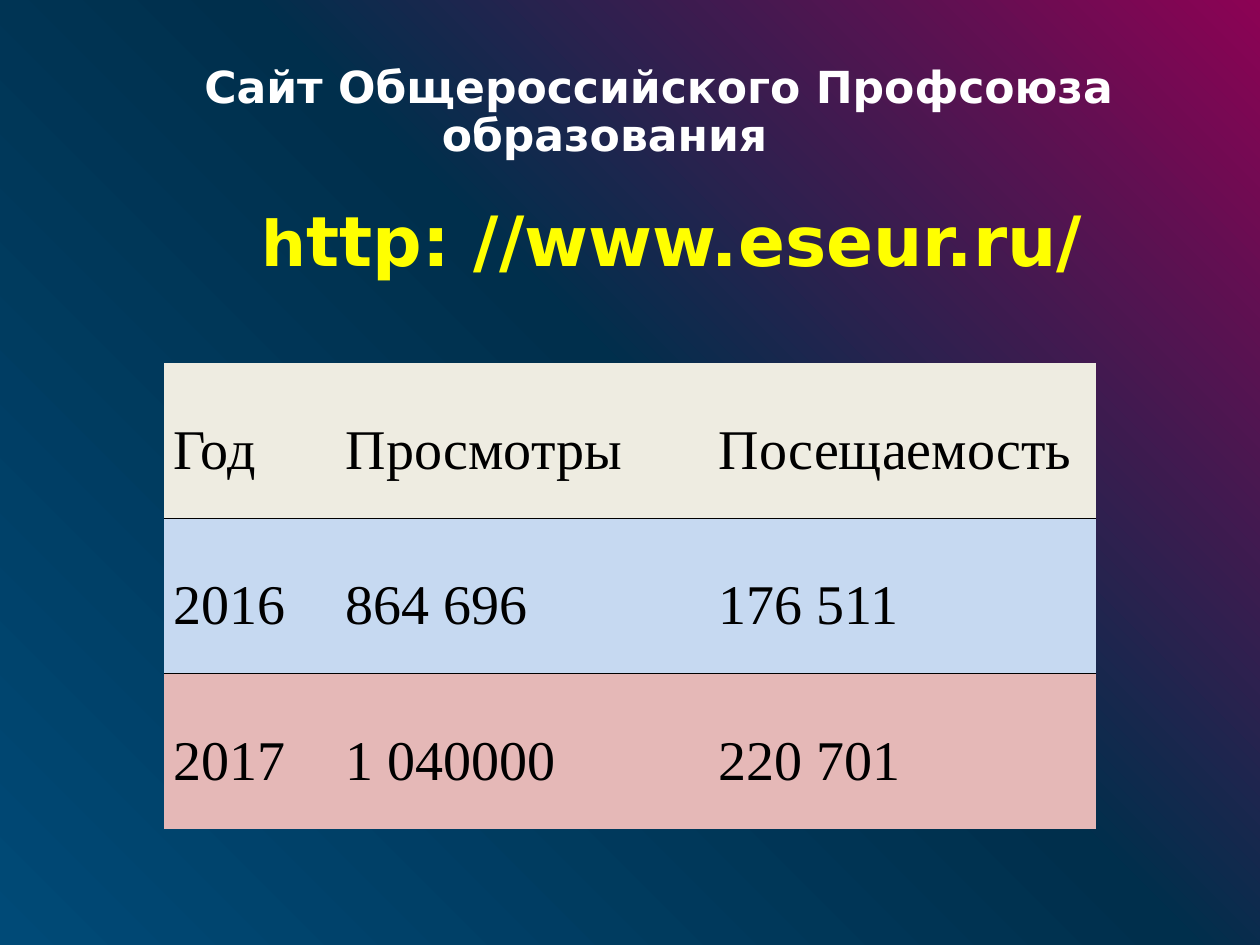
import copy

import pptx
import pptx.dml.color
import pptx.enum.text
import pptx.oxml
import pptx.oxml.ns
import pptx.util

Pt = pptx.util.Pt
RGB = pptx.dml.color.RGBColor
MIDDLE = pptx.enum.text.MSO_ANCHOR.MIDDLE
CENTER = pptx.enum.text.PP_ALIGN.CENTER

WHITE = RGB(0xFF, 0xFF, 0xFF)
BLACK = RGB(0, 0, 0)
YELLOW = RGB(0xFF, 0xFF, 0)
BLUE = RGB(0, 0x4A, 0x77)
NAVY = RGB(0, 0x2F, 0x4C)
PLUM = RGB(0x8C, 0x02, 0x54)
CREAM = RGB(0xEE, 0xEC, 0xE1)
SKY = RGB(0xC6, 0xD9, 0xF1)
ROSE = RGB(0xE5, 0xB8, 0xB7)
NO_GRID = "{2D5ABB26-0587-4C30-8999-92F81FD0307C}"


class Deck:
    head_font = "DejaVu Sans"
    body_font = "Times New Roman"

    def __init__(self, wide, high):
        self.prs = pptx.Presentation()
        self.prs.slide_width, self.prs.slide_height = Pt(wide), Pt(high)
        self.slide = self.prs.slides.add_slide(self.prs.slide_layouts[6])

    def back(self, stops, angle):
        fill = self.slide.background.fill
        fill.gradient()
        fill.gradient_angle = angle
        items = self.slide.element.find(".//" + pptx.oxml.ns.qn("a:gsLst"))
        while len(items) < len(stops):
            items.append(copy.deepcopy(items[-1]))
        for stop, (place, color) in zip(fill.gradient_stops, stops):
            stop.position, stop.color.rgb = place, color

    def run(self, para, text, size, color, font, bold=False):
        run = para.add_run()
        run.text = text
        run.font.name, run.font.size, run.font.bold = font, Pt(size), bold
        run.font.color.rgb = color

    def title(self, box, lines):
        """Each line is its first-line indent, space before and runs."""
        frame = self.slide.shapes.add_textbox(*map(Pt, box)).text_frame
        frame.word_wrap = True
        frame.vertical_anchor = MIDDLE
        for i, (indent, gap, runs) in enumerate(lines):
            para = frame.add_paragraph() if i else frame.paragraphs[0]
            para.alignment, para.line_spacing = CENTER, 0.9
            para._p.get_or_add_pPr().set("indent", str(Pt(indent)))
            if gap:
                para.space_before = Pt(gap)
            for text, size, color in runs:
                self.run(para, text, size, color, self.head_font, True)

    def edge(self, cell, side):
        line = pptx.oxml.parse_xml(
            f'<a:ln{side} {pptx.oxml.ns.nsdecls("a")} w="{Pt(1)}"><a:solidFill>'
            f'<a:srgbClr val="{BLACK}"/></a:solidFill></a:ln{side}>')
        cell._tc.get_or_add_tcPr().insert(0, line)

    def table(self, left, top, widths, high, rows, fills):
        shape = self.slide.shapes.add_table(
            len(rows), len(widths), Pt(left), Pt(top),
            Pt(sum(widths)), Pt(high * len(rows)))
        grid = shape.table
        style = shape.element.find(".//" + pptx.oxml.ns.qn("a:tableStyleId"))
        style.text = NO_GRID
        for col, width in zip(grid.columns, widths):
            col.width = Pt(width)
        for r, (row, fill) in enumerate(zip(rows, fills)):
            grid.rows[r].height = Pt(high)
            for c, text in enumerate(row):
                cell = grid.cell(r, c)
                cell.fill.solid()
                cell.fill.fore_color.rgb = fill
                cell.vertical_anchor = MIDDLE
                cell.margin_left = cell.margin_right = Pt(5.4)
                cell.margin_top, cell.margin_bottom = Pt(6), 0
                para = cell.text_frame.paragraphs[0]
                para.line_spacing = 1.15
                self.run(para, text, 32, BLACK, self.body_font)
                if r < len(rows) - 1:
                    self.edge(cell, "B")
                if r:
                    self.edge(cell, "T")


def main():
    deck = Deck(720, 540)
    deck.back([(0, BLUE), (0.54, NAVY), (1, PLUM)], 45)
    deck.title((20, 46.8, 651, 104.4), [
        (62, 0, [("Сайт Общероссийского Профсоюза образования", 25.2, WHITE)]),
        (77, 26, [("h", 36, YELLOW), ("ttp: //www.eseur.ru/", 39.6, YELLOW)]),
    ])
    deck.table(93.6, 207.4, (98.6, 213.2, 221), 88.8, [
        ("Год", "Просмотры", "Посещаемость"),
        ("2016", "864 696", "176 511"),
        ("2017", "1 040000", "220 701"),
    ], (CREAM, SKY, ROSE))
    deck.prs.save("out.pptx")


if __name__ == "__main__":
    main()
